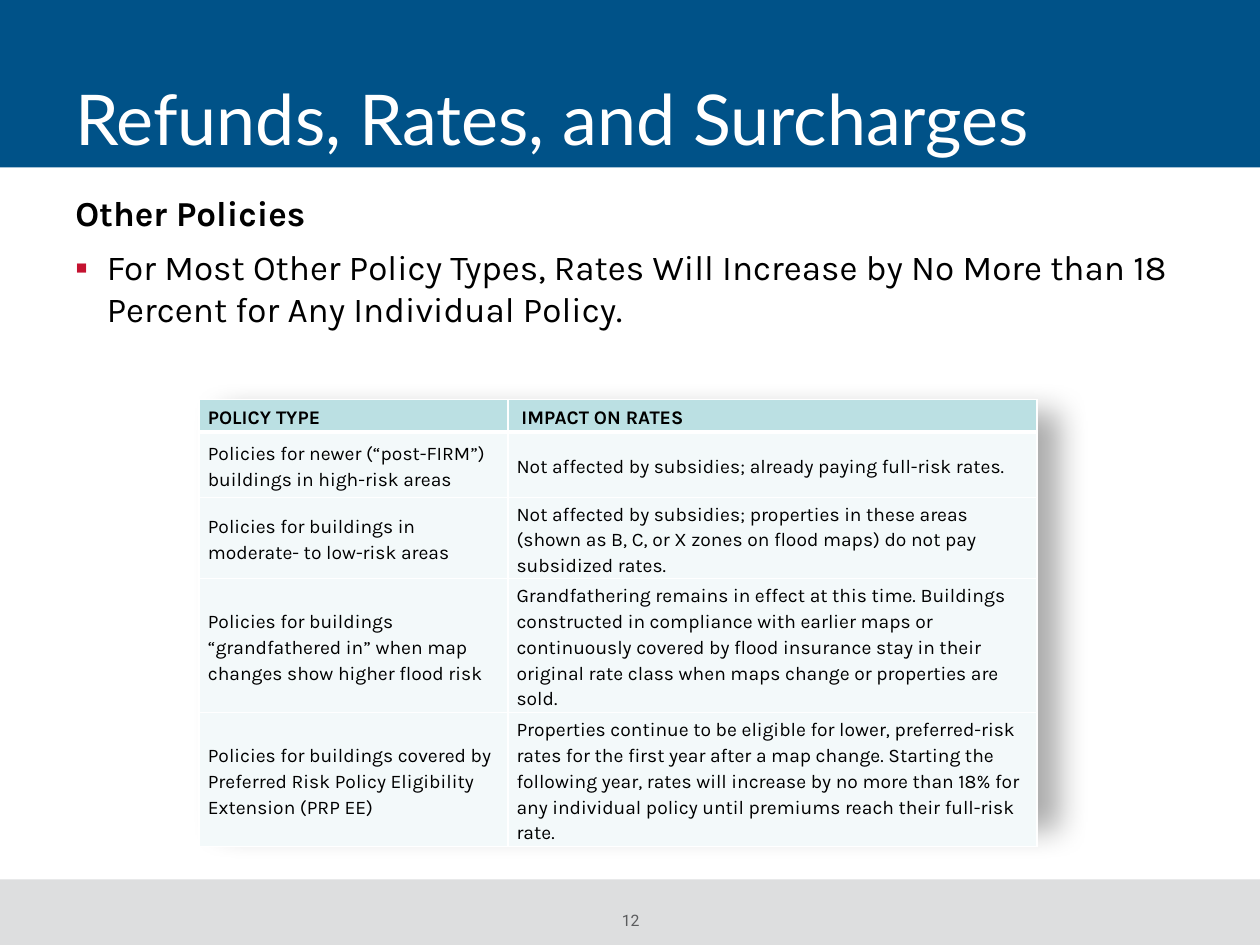
import pptx
import pptx.dml.color
import pptx.enum.shapes
import pptx.enum.text
import pptx.oxml
import pptx.oxml.ns
import pptx.util
from lxml import etree

Inches = pptx.util.Inches
Pt = pptx.util.Pt
Align = pptx.enum.text.PP_ALIGN
Anchor = pptx.enum.text.MSO_ANCHOR

POLICY_ROWS = [
    ("Policies for newer (“post-FIRM”) buildings in high-risk areas",
     "Not affected by subsidies; already paying full-risk rates."),
    ("Policies for buildings in moderate- to low-risk areas",
     "Not affected by subsidies; properties in these areas (shown as B, C, or X zones "
     "on flood maps) do not pay subsidized rates."),
    ("Policies for buildings “grandfathered in” when map changes show higher flood risk",
     "Grandfathering remains in effect at this time. Buildings constructed in compliance "
     "with earlier maps or continuously covered by flood insurance stay in their original "
     "rate class when maps change or properties are sold."),
    ("Policies for buildings covered by Preferred Risk Policy Eligibility Extension (PRP EE)",
     "Properties continue to be eligible for lower, preferred-risk rates for the first year "
     "after a map change. Starting the following year, rates will increase by no more than "
     "18% for any individual policy until premiums reach their full-risk rate."),
]


def color(value):
    return pptx.dml.color.RGBColor.from_string(value)


def add_element(parent, tag, **attributes):
    element = etree.SubElement(parent, pptx.oxml.ns.qn(tag))
    for name, value in attributes.items():
        element.set(name, str(value))
    return element


class PolicySlide:
    """Holds the slide's style and draws each kind of element on it."""

    blue, gray, red = "005288", "DDDEDF", "C41230"
    header_fill, row_fill = "BBE0E3", "F3F9FA"
    white, black, muted = "FFFFFF", "000000", "5B5C5E"
    heading_font, body_font, number_font = "Lato", "Karla", "Roboto"

    def __init__(self, deck):
        self.page = deck.slides.add_slide(deck.slide_layouts[6])

    def rectangle(self, left, top, width, height, fill):
        shape = self.page.shapes.add_shape(
            pptx.enum.shapes.MSO_SHAPE.RECTANGLE,
            Inches(left), Inches(top), Inches(width), Inches(height))
        shape.shadow.inherit = False
        shape.fill.solid()
        shape.fill.fore_color.rgb = color(fill)
        shape.line.fill.background()
        return shape

    def cast_shadow(self, shape, opacity, blur, distance, angle):
        effects = shape._element.spPr.find(pptx.oxml.ns.qn("a:effectLst"))
        shadow = add_element(effects, "a:outerShdw", blurRad=Pt(blur), dist=Pt(distance),
                             dir=angle * 60000, algn="tl", rotWithShape=0)
        shade = add_element(shadow, "a:srgbClr", val=self.black)
        add_element(shade, "a:alpha", val=opacity * 1000)

    def text_box(self, left, top, width, height, anchor=Anchor.TOP):
        box = self.page.shapes.add_textbox(
            Inches(left), Inches(top), Inches(width), Inches(height))
        frame = box.text_frame
        frame.word_wrap = True
        frame.vertical_anchor = anchor
        return frame

    def add_span(self, para, text, size, font, ink, bold=False):
        span = para.add_run()
        span.text = text
        span.font.size = Pt(size)
        span.font.name = font
        span.font.bold = bold
        span.font.color.rgb = color(ink)

    def bullet(self, para, mark, indent):
        properties = para._p.get_or_add_pPr()
        properties.set("marL", str(Inches(indent)))
        properties.set("indent", str(-Inches(indent)))
        tint = add_element(properties, "a:buClr")
        add_element(tint, "a:srgbClr", val=self.red)
        add_element(properties, "a:buSzPct", val=90000)
        add_element(properties, "a:buFont", typeface=self.body_font)
        add_element(properties, "a:buChar", char=mark)

    def borders(self, cell, top, bottom):
        properties = cell._tc.get_or_add_tcPr()
        for index, (side, width) in enumerate(
                [("L", 1), ("R", 1), ("T", top), ("B", bottom)]):
            line = pptx.oxml.parse_xml(
                f'<a:ln{side} {pptx.oxml.ns.nsdecls("a")} w="{Pt(width)}"><a:solidFill>'
                f'<a:srgbClr val="{self.white}"/></a:solidFill></a:ln{side}>')
            properties.insert(index, line)

    def cell(self, cell, text, header):
        cell.margin_left = cell.margin_right = Inches(0.07)
        cell.margin_top, cell.margin_bottom = Inches(0.01), 0
        cell.vertical_anchor = Anchor.MIDDLE
        cell.fill.solid()
        cell.fill.fore_color.rgb = color(self.header_fill if header else self.row_fill)
        para = cell.text_frame.paragraphs[0]
        para.line_spacing = 1.15
        para.space_after = Pt(10)
        self.add_span(para, text, 11, self.body_font, self.black, header)

    def table(self, left, top, widths, heights, rows):
        table = self.page.shapes.add_table(
            len(rows), len(widths), Inches(left), Inches(top),
            Inches(sum(widths)), Inches(sum(heights))).table
        for column, width in zip(table.columns, widths):
            column.width = Inches(width)
        for index, (height, texts) in enumerate(zip(heights, rows)):
            table.rows[index].height = Inches(height)
            for cell, text in zip(table.rows[index].cells, texts):
                self.cell(cell, text, index == 0)
                self.borders(cell, 3 if index == 1 else 1, 3 if index == 0 else 1)


def main():
    deck = pptx.Presentation()
    deck.slide_width, deck.slide_height = Inches(10), Inches(7.5)
    slide = PolicySlide(deck)

    slide.rectangle(0, 6.98, 10, 0.52, slide.gray)
    number = slide.text_box(4.17, 7.23, 1.67, 0.15)
    number.margin_left = number.margin_right = number.margin_top = number.margin_bottom = 0
    number.paragraphs[0].alignment = Align.CENTER
    slide.add_span(number.paragraphs[0], "12", 9, slide.number_font, slide.muted)

    slide.rectangle(0, 0, 10, 1.33, slide.blue)
    backing = slide.rectangle(1.58, 3.17, 6.65, 3.33, slide.white)
    slide.cast_shadow(backing, 32, 17.5, 15, 28)

    title = slide.text_box(0.5, 0.05, 9, 1.26, Anchor.BOTTOM).paragraphs[0]
    title.line_spacing = 0.8
    slide.add_span(title, "Refunds, Rates, and Surcharges", 40, slide.heading_font, slide.white)

    body = slide.text_box(0.5, 1.47, 9, 5.4)
    slide.add_span(body.paragraphs[0], "Other Policies", 20, slide.body_font, slide.black, True)
    point = body.add_paragraph()
    slide.bullet(point, "▪", 0.25)
    point.space_before = Pt(7)
    slide.add_span(point, "For Most Other Policy Types, Rates Will Increase by No More than 18 "
                   "Percent for Any Individual Policy.", 20, slide.body_font, slide.black)

    slide.table(1.58, 3.17, [2.45, 4.2], [0.26, 0.52, 0.52, 1.02, 1.02],
                [("POLICY TYPE", " IMPACT ON RATES")] + POLICY_ROWS)
    deck.save("out.pptx")


if __name__ == "__main__":
    main()
